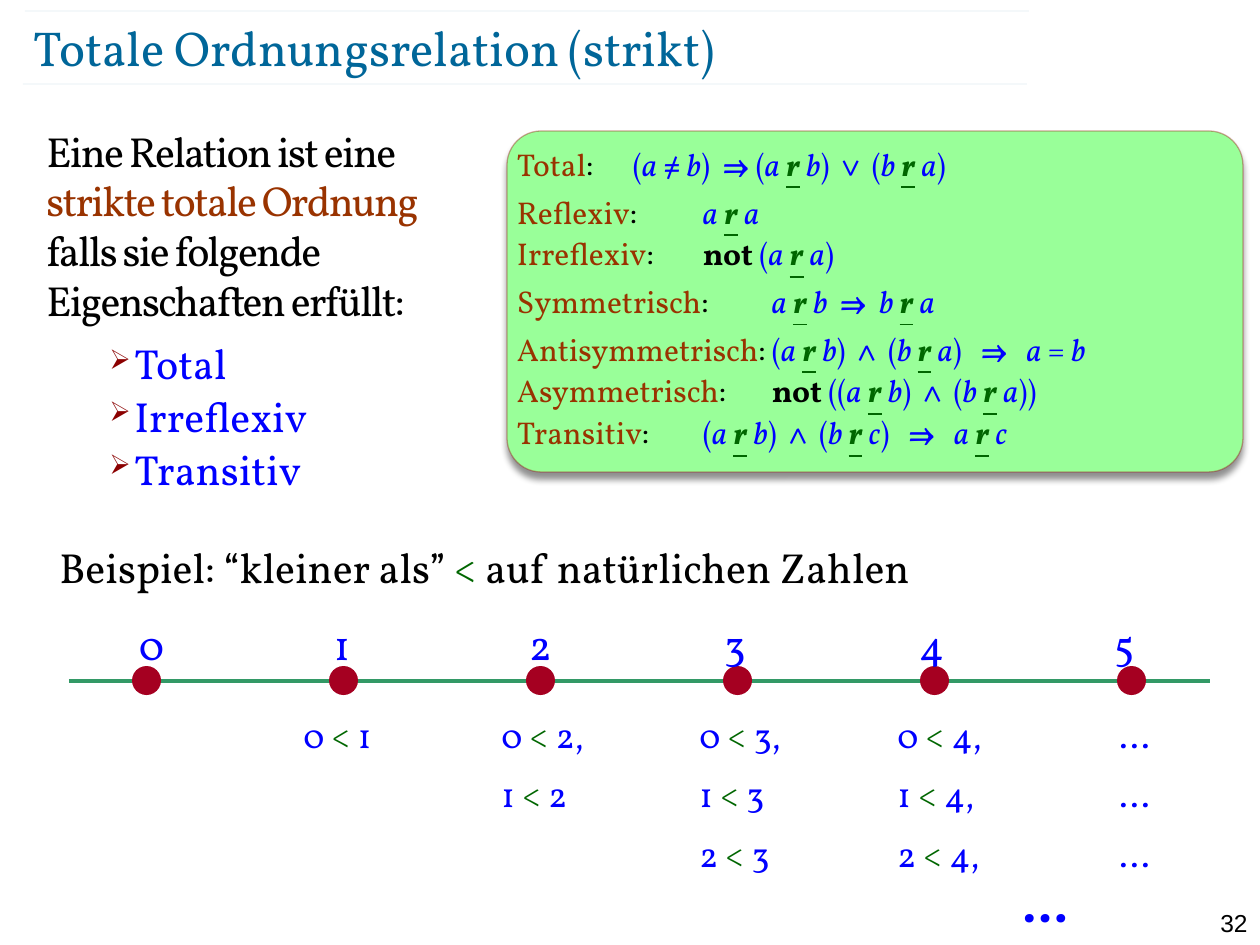
from itertools import groupby

from lxml.etree import SubElement
from pptx import Presentation
from pptx.dml.color import RGBColor
from pptx.enum.shapes import MSO_CONNECTOR, MSO_SHAPE
from pptx.enum.text import MSO_ANCHOR, PP_ALIGN
from pptx.oxml.ns import qn
from pptx.util import Emu, Pt

FONT = "Vollkorn"
BLACK, BLUE, GREEN, BROWN, TEAL = "000000", "0000FF", "006600", "993300", "006699"
LESS = {"<": {"color": GREEN}}
FORMULA = {
    **dict.fromkeys("abc", {"italic": True}),
    **dict.fromkeys("≠⇒∨∧", {"bold": True}),
    **dict.fromkeys("not", {"bold": True, "color": BLACK}),
    "r": {"color": GREEN, "bold": True, "italic": True, "underline": True},
}
PROPERTIES = [
    ("Total", 116, 3.6, "(a ≠ b)  ⇒ (a r b)  ∨  (b r a)"),
    ("Reflexiv", 186, 0, "a r a"),
    ("Irreflexiv", 186, 3.6, "not (a r a)"),
    ("Symmetrisch", 255, 3.6, "a r b  ⇒  b r a"),
    ("Antisymmetrisch", 255, 0, "(a r b)  ∧  (b r a)   ⇒   a = b"),
    ("Asymmetrisch", 255, 0, "not ((a r b)  ∧  (b r a))"),
    ("Transitiv", 186, 0, "(a r b)  ∧  (b r c)   ⇒   a r c"),
]
PAIRS = [
    "\t0 < 1\t0 < 2,\t0 < 3,\t0 < 4,\t...",
    "\t\t1 < 2\t1 < 3\t1 < 4,\t...",
    "\t\t\t2 < 3\t2 < 4,\t...",
]


def px(n):
    return Emu(round(n * 914400 / 126))


def rgb(color):
    return RGBColor.from_string(color)


def marked(text, styles, **base):
    groups = groupby(text, key=lambda ch: styles.get(ch, {}))
    return [("".join(chars), {**base, **style}) for style, chars in groups]


def add_tabs(p, stops):
    tabs = SubElement(p._p.get_or_add_pPr(), qn("a:tabLst"))
    for stop in stops:
        SubElement(tabs, qn("a:tab"), pos=str(px(stop)), algn="l")


def add_bullet(p, char, color, percent, left, hanging):
    pPr = p._p.get_or_add_pPr()
    pPr.set("marL", str(px(left)))
    pPr.set("indent", str(-px(hanging)))
    SubElement(SubElement(pPr, qn("a:buClr")), qn("a:srgbClr"), val=color)
    SubElement(pPr, qn("a:buSzPct"), val=str(percent * 1000))
    SubElement(pPr, qn("a:buChar"), char=char)


def add_text(p, text, size=24, color=BLACK, font=FONT, bold=False,
             italic=False, underline=False, spacing=0):
    r = p.add_run()
    r.text = text
    f = r.font
    f.size, f.name, f.bold, f.italic = Pt(size), font, bold, italic
    f.underline = underline
    f.color.rgb = rgb(color)
    if spacing:
        r._r.get_or_add_rPr().set("spc", str(spacing * 100))


def add_runs(p, runs):
    for text, style in runs:
        add_text(p, text, **style)


def set_insets(tf, inset):
    tf.margin_left = tf.margin_top = tf.margin_right = tf.margin_bottom = px(inset)


def add_box(s, x, y, w, h, inset=None):
    tf = s.shapes.add_textbox(px(x), px(y), px(w), px(h)).text_frame
    tf.word_wrap = True
    if inset is not None:
        set_insets(tf, inset)
    return tf


def next_paragraph(tf, before=0, after=0, line=1.0):
    p = tf.paragraphs[0]
    if p.runs:
        p = tf.add_paragraph()
        p.space_before = Pt(before)
    p.space_after = Pt(after)
    p.line_spacing = line
    return p


def add_line(s, x1, x2, y, color, width, alpha=100):
    line = s.shapes.add_connector(MSO_CONNECTOR.STRAIGHT, px(x1), px(y), px(x2), px(y))
    line.line.width = Pt(width)
    set_line_color(line, color, alpha)
    SubElement(line._element.spPr, qn("a:effectLst"))


def set_line_color(sp, color, alpha):
    sp.line.color.rgb = rgb(color)
    clr = sp._element.spPr.find(qn("a:ln")).find(".//" + qn("a:srgbClr"))
    SubElement(clr, qn("a:alpha"), val=str(alpha * 1000))


def add_shape(s, kind, x, y, w, h, fill):
    sp = s.shapes.add_shape(kind, px(x), px(y), px(w), px(h))
    sp.shadow.inherit = False
    sp.fill.solid()
    sp.fill.fore_color.rgb = rgb(fill)
    sp.line.fill.background()
    return sp


def add_drop_shadow(sp, color, alpha, size):
    effects = sp._element.spPr.find(qn("a:effectLst"))
    shadow = SubElement(effects, qn("a:outerShdw"), blurRad=str(Pt(size)),
                        dist=str(Pt(size)), dir="5400000", rotWithShape="0")
    clr = SubElement(shadow, qn("a:srgbClr"), val=color)
    SubElement(clr, qn("a:alpha"), val=str(alpha * 1000))


def add_heading(s):
    add_line(s, 23, 1027, 84, TEAL, 0.1, 35)
    add_line(s, 25, 1029, 11, TEAL, 0.1, 35)
    tf = add_box(s, 34, 16, 1095, 61, inset=0)
    tf.vertical_anchor = MSO_ANCHOR.MIDDLE
    add_text(tf.paragraphs[0], "Totale Ordnungsrelation (strikt)", size=28, color=TEAL)


def add_definition(s):
    tf = add_box(s, 34, 121, 462, 390)
    p = next_paragraph(tf, after=5, line=0.99)
    add_text(p, "Eine Relation ist eine ", spacing=-1)
    add_text(p, "strikte totale Ordnung ", color=BROWN, spacing=-1)
    add_text(p, "falls sie folgende Eigenschaften erfüllt:", spacing=-1)
    for name in ("Total", "Irreflexiv", "Transitiv"):
        p = next_paragraph(tf, before=7, line=0.8)
        add_bullet(p, "➢", "8B0000", 65, 88, 25)
        add_text(p, name, color=BLUE)


def add_properties(s):
    sp = add_shape(s, MSO_SHAPE.ROUNDED_RECTANGLE, 507, 131, 736, 341, "99FF99")
    sp.adjustments[0] = 0.1
    sp.line.width = Pt(0.75)
    set_line_color(sp, "990000", 34)
    add_drop_shadow(sp, BLACK, 43, 4)
    tf = sp.text_frame
    tf.word_wrap = True
    tf.vertical_anchor = MSO_ANCHOR.TOP
    set_insets(tf, 0)
    for name, tab, after, formula in PROPERTIES:
        p = next_paragraph(tf, after=after, line=1.1)
        p.alignment = PP_ALIGN.LEFT
        add_tabs(p, [tab])
        add_text(p, name, size=18, color=BROWN)
        add_text(p, ":\t", size=18)
        add_runs(p, marked(formula, FORMULA, size=18, color=BLUE))


def add_number_line(s):
    add_line(s, 69, 1210, 681, "339966", 2.25)
    for i in range(6):
        add_shape(s, MSO_SHAPE.OVAL, 132 + 197 * i, 666, 29, 29, "A50021")
        tf = add_box(s, 139 + 195 * i, 619, 30, 50, inset=0)
        add_text(tf.paragraphs[0], str(i), color=BLUE)


def add_example(s):
    tf = add_box(s, 47, 535, 1173, 63)
    add_runs(tf.paragraphs[0],
             marked("Beispiel: “kleiner als” < auf natürlichen Zahlen", LESS))
    add_number_line(s)
    tf = add_box(s, 57, 707, 1163, 236)
    for row in PAIRS:
        p = next_paragraph(tf, before=10)
        add_tabs(p, [234 + 198 * i for i in range(4)] + [1050])
        add_runs(p, marked(row, LESS, size=20, color=BLUE))
    p = next_paragraph(tf, before=14, line=0.5)
    add_tabs(p, [953])
    add_text(p, "\t...", size=28, color=BLUE, bold=True)


def add_page_number(s):
    p = add_box(s, 1191, 902, 69, 30).paragraphs[0]
    p.alignment = PP_ALIGN.RIGHT
    add_text(p, "32", size=14, font="Arial")


def main():
    prs = Presentation()
    prs.slide_width, prs.slide_height = px(1260), px(945)
    s = prs.slides.add_slide(prs.slide_layouts[6])
    add_heading(s)
    add_definition(s)
    add_properties(s)
    add_example(s)
    add_page_number(s)
    prs.save("out.pptx")


if __name__ == "__main__":
    main()
